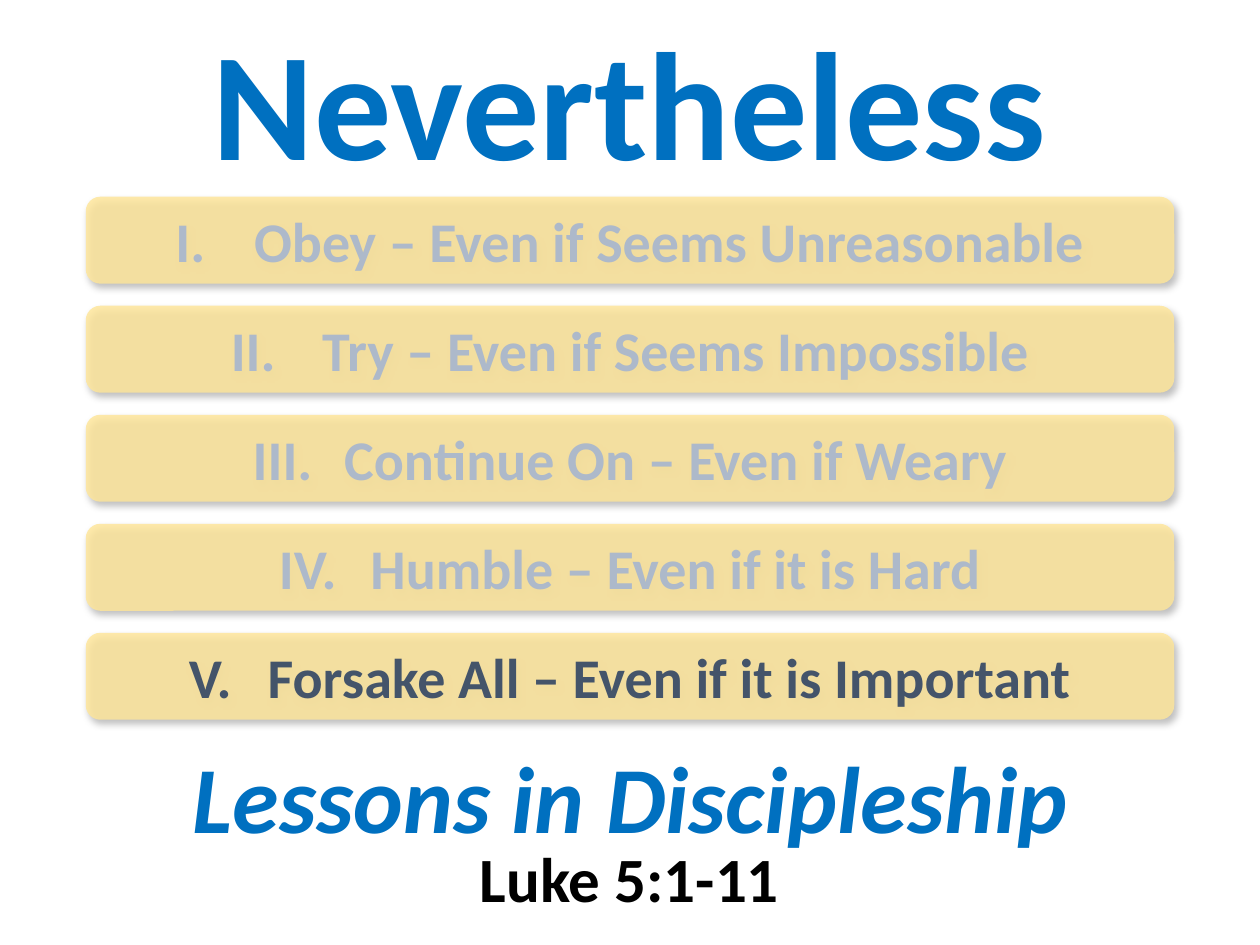
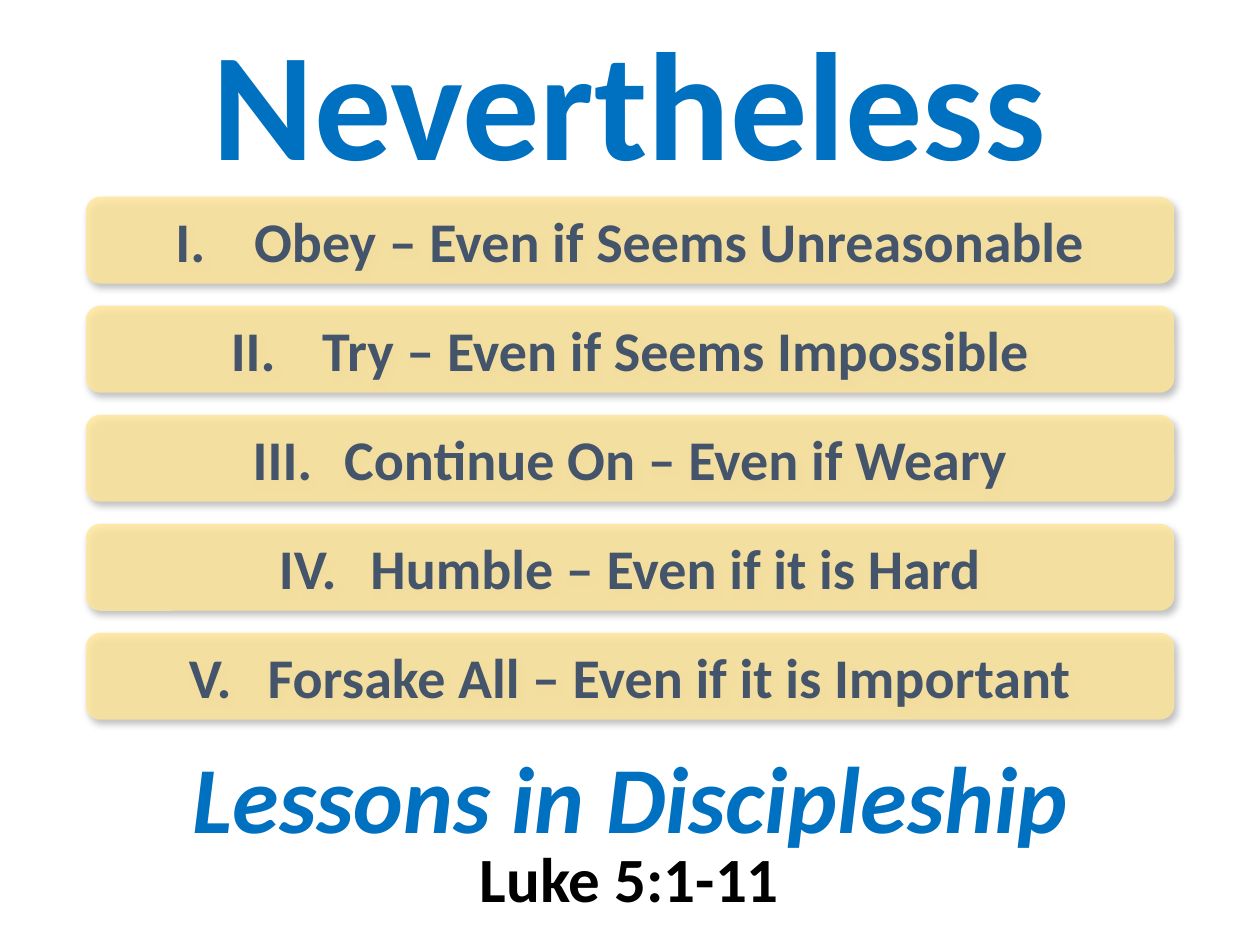
from dataclasses import dataclass

from lxml import etree
from pptx import Presentation
from pptx import util as u
from pptx.dml import color
from pptx.enum import shapes, text
from pptx.oxml import ns

FONT = "Calibri"
BLUE, GOLD, BLACK = "0070C0", "FFC000", "000000"
BAND, ACTIVE, DIMMED = "FFE699", "44546A", "ADB9CA"
BAND_LEFT, BAND_TOP, BAND_WIDTH, BAND_HEIGHT = 49, 112.4, 622, 49.7
BAND_PITCH = 62.3
INDENT = 45
POINTS = [
    "Obey – Even if Seems Unreasonable",
    " Try – Even if Seems Impossible",
    " Continue On – Even if Weary",
    " Humble – Even if it is Hard",
    "Forsake All – Even if it is Important",
]


@dataclass(frozen=True)
class Caption:
    words: str
    left: float
    top: float
    width: float
    height: float
    size: float
    color: str = BLUE
    italic: bool = False
    outline: str = ""
    wrap: bool = False


CAPTIONS = [
    Caption("Nevertheless", 101.5, 0, 516.5, 113.8, 88, outline=GOLD),
    Caption("Lessons in Discipleship", 97, 419, 526.5, 72.7, 54, italic=True, outline=GOLD),
    Caption("Luke 5:1-11", 221, 476, 277.5, 51, 36, color=BLACK, wrap=True),
]


def rgb(value: str) -> color.RGBColor:
    return color.RGBColor.from_string(value)


def add_node(parent, tag: str, **attributes):
    return etree.SubElement(parent, ns.qn(tag), {k: str(v) for k, v in attributes.items()})


def add_color(parent, value: str, alpha: int = 100) -> None:
    node = add_node(parent, "a:srgbClr", val=value)
    if alpha < 100:
        add_node(node, "a:alpha", val=alpha * 1000)


def style_run(r, size: float, value: str, italic: bool = False) -> None:
    r.font.name = FONT
    r.font.size = u.Pt(size)
    r.font.bold = True
    r.font.italic = italic
    r.font.color.rgb = rgb(value)


def outline_run(r, value: str) -> None:
    properties = r.font._element
    line = add_node(properties, "a:ln", w=u.Pt(1))
    add_color(add_node(line, "a:solidFill"), value)
    properties.insert(0, line)


def draw_caption(slide, caption: Caption) -> None:
    box = (caption.left, caption.top, caption.width, caption.height)
    tf = slide.shapes.add_textbox(*map(u.Pt, box)).text_frame
    tf.word_wrap = caption.wrap
    tf.auto_size = text.MSO_AUTO_SIZE.SHAPE_TO_FIT_TEXT
    tf.text = caption.words
    p = tf.paragraphs[0]
    p.alignment = text.PP_ALIGN.CENTER
    r = p.runs[0]
    style_run(r, caption.size, caption.color, caption.italic)
    if caption.outline:
        outline_run(r, caption.outline)


def add_shadow(sp) -> None:
    sp.shadow.inherit = False
    effects = sp._element.spPr.find(ns.qn("a:effectLst"))
    shadow = add_node(effects, "a:outerShdw", blurRad=u.Pt(4.5), dist=u.Pt(2.6),
                      dir=53 * 60000, algn="tl", rotWithShape=0)
    add_color(shadow, BLACK, 30)


def draw_point(slide, number: int, words: str, value: str) -> None:
    box = (BAND_LEFT, BAND_TOP + (number - 1) * BAND_PITCH, BAND_WIDTH, BAND_HEIGHT)
    sp = slide.shapes.add_shape(shapes.MSO_SHAPE.ROUNDED_RECTANGLE, *map(u.Pt, box))
    sp.fill.solid()
    sp.fill.fore_color.rgb = rgb(BAND)
    fill = sp._element.spPr.find(ns.qn("a:solidFill"))
    add_node(fill[0], "a:alpha", val=82000)
    sp.line.fill.background()
    add_shadow(sp)
    tf = sp.text_frame
    tf.word_wrap = True
    tf.vertical_anchor = text.MSO_ANCHOR.MIDDLE
    tf.text = words
    p = tf.paragraphs[0]
    p.alignment = text.PP_ALIGN.CENTER
    properties = p._p.get_or_add_pPr()
    properties.set("marL", str(u.Pt(INDENT)))
    properties.set("indent", str(-u.Pt(INDENT)))
    add_node(properties, "a:buFont", typeface="+mj-lt")
    add_node(properties, "a:buAutoNum", type="romanUcPeriod", startAt=number)
    style_run(p.runs[0], 32, value)


def draw_slide(prs, active: set[int]) -> None:
    slide = prs.slides.add_slide(prs.slide_layouts[6])
    for caption in CAPTIONS:
        draw_caption(slide, caption)
    for number, words in enumerate(POINTS, 1):
        draw_point(slide, number, words, ACTIVE if number in active else DIMMED)


def main() -> None:
    prs = Presentation()
    prs.slide_width, prs.slide_height = u.Pt(720), u.Pt(540)
    last = len(POINTS)
    for active in ({last}, set(range(1, last + 1))):
        draw_slide(prs, active)
    prs.save("out.pptx")


if __name__ == "__main__":
    main()
